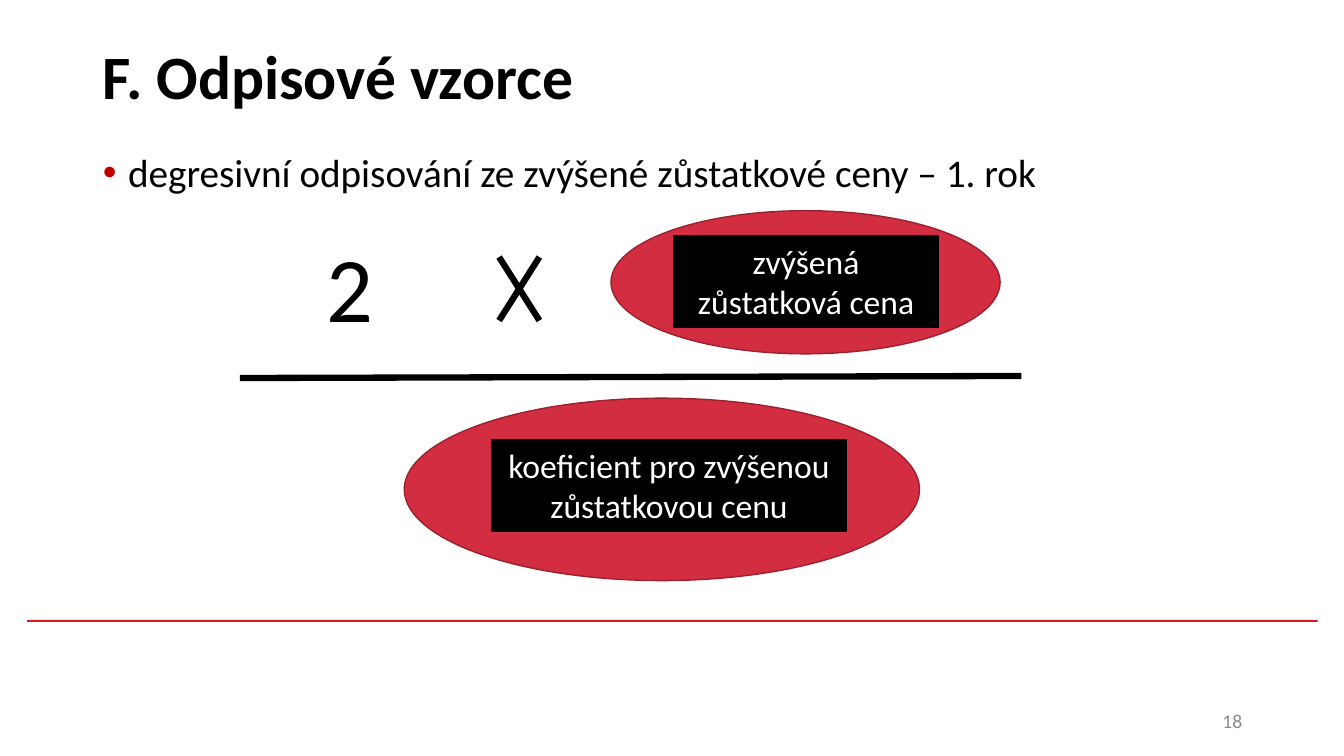
import pptx
import pptx.dml.color
import pptx.enum.shapes
import pptx.enum.text
import pptx.oxml
import pptx.oxml.ns
import pptx.util

PX = 9144  # EMU per px, 100 px to the inch
SHAPE = pptx.enum.shapes.MSO_SHAPE
ALIGN = pptx.enum.text.PP_ALIGN
ANCHOR = pptx.enum.text.MSO_ANCHOR
NS = pptx.oxml.ns.nsdecls("a")


def rgb(value):
    return pptx.dml.color.RGBColor.from_string(value)


def px(*lengths):
    return [pptx.util.Emu(n * PX) for n in lengths]


class FormulaSlide:
    FONT = "Calibri"
    BLACK, WHITE, GREY = "000000", "FFFFFF", "8C8C8C"
    RED, DARK_RED = "D22D40", "9B212F"
    RULE_RED, BULLET_RED = "CD1F21", "C00000"

    def __init__(self, prs):
        self.s = prs.slides.add_slide(prs.slide_layouts[1])

    def set_text(self, sp, text, size, color=BLACK, bold=False,
                 align=ALIGN.LEFT, anchor=ANCHOR.TOP):
        tf = sp.text_frame
        frame = {"word_wrap": True, "vertical_anchor": anchor,
                 "auto_size": pptx.enum.text.MSO_AUTO_SIZE.NONE}
        for name, value in frame.items():
            setattr(tf, name, value)
        p = tf.paragraphs[0]
        p.alignment = align
        p.space_before = pptx.util.Pt(0)
        r = p.add_run()
        r.text = text
        font = {"name": self.FONT, "size": pptx.util.Pt(size), "bold": bold}
        for name, value in font.items():
            setattr(r.font, name, value)
        r.font.color.rgb = rgb(color)
        return p

    def place(self, sp, box):
        for name, value in zip(("left", "top", "width", "height"), px(*box)):
            setattr(sp, name, value)
        return sp

    def title(self, box, text):
        sp = self.place(self.s.shapes.title, box)
        self.set_text(sp, text, 44, bold=True, anchor=ANCHOR.MIDDLE)

    def bullet(self, box, text):
        sp = self.place(self.s.placeholders[1], box)
        p = self.set_text(sp, text, 28)
        p.line_spacing = 0.9
        pPr = p._p.get_or_add_pPr()
        indent = 25 * PX
        pPr.set("marL", str(indent))
        pPr.set("indent", str(-indent))
        for xml in (f'<a:buClr {NS}><a:srgbClr val="{self.BULLET_RED}"/></a:buClr>',
                    f'<a:buChar {NS} char="•"/>'):
            pPr.append(pptx.oxml.parse_xml(xml))

    def text(self, box, text, size, **style):
        self.set_text(self.s.shapes.add_textbox(*px(*box)), text, size, **style)

    def shape(self, kind, box, fill, line=None):
        sp = self.s.shapes.add_shape(kind, *px(*box))
        sp.shadow.inherit = False
        sp.fill.solid()
        sp.fill.fore_color.rgb = rgb(fill)
        if line:
            sp.line.color.rgb = rgb(line)
            sp.line.width = pptx.util.Pt(1)
        else:
            sp.line.fill.background()
        return sp

    def term(self, oval, label, text):
        """Draw a red oval with a black label on it."""
        self.shape(SHAPE.OVAL, oval, self.RED, self.DARK_RED)
        sp = self.shape(SHAPE.RECTANGLE, label, self.BLACK, self.BLACK)
        self.set_text(sp, text, 24, self.WHITE, align=ALIGN.CENTER)

    def line(self, *ends):
        straight = pptx.enum.shapes.MSO_CONNECTOR.STRAIGHT
        c = self.s.shapes.add_connector(straight, *px(*ends))
        c.line.color.rgb = rgb(self.BLACK)
        c.line.width = pptx.util.Pt(4.5)
        c._element.spPr.append(pptx.oxml.parse_xml(f"<a:effectLst {NS}/>"))


def main():
    prs = pptx.Presentation()
    prs.slide_width, prs.slide_height = px(1333, 750)
    fs = FormulaSlide(prs)
    fs.shape(SHAPE.RECTANGLE, (27, 615, 1280, 2), fs.RULE_RED)
    fs.title((92, 2, 1150, 145), "F. Odpisové vzorce")
    fs.bullet((92, 147, 1150, 457),
              "degresivní odpisování ze zvýšené zůstatkové ceny – 1. rok")
    fs.text((942, 695, 300, 40), "18", 14, color=fs.GREY,
            align=ALIGN.RIGHT, anchor=ANCHOR.MIDDLE)

    fs.text((314, 223, 173, 121), "2", 66)
    left, top, right, bottom = 495, 255, 535, 318
    fs.line(right, top, left, bottom)
    fs.line(left, top, right, bottom)
    fs.term((606, 209, 386, 142), (668, 234, 263, 91),
            "zvýšená zůstatková cena")
    fs.line(238, 375, 1013, 373)
    fs.term((401, 395, 511, 181), (488, 436, 351, 91),
            "koeficient pro zvýšenou zůstatkovou cenu")
    prs.save("out.pptx")


if __name__ == "__main__":
    main()
